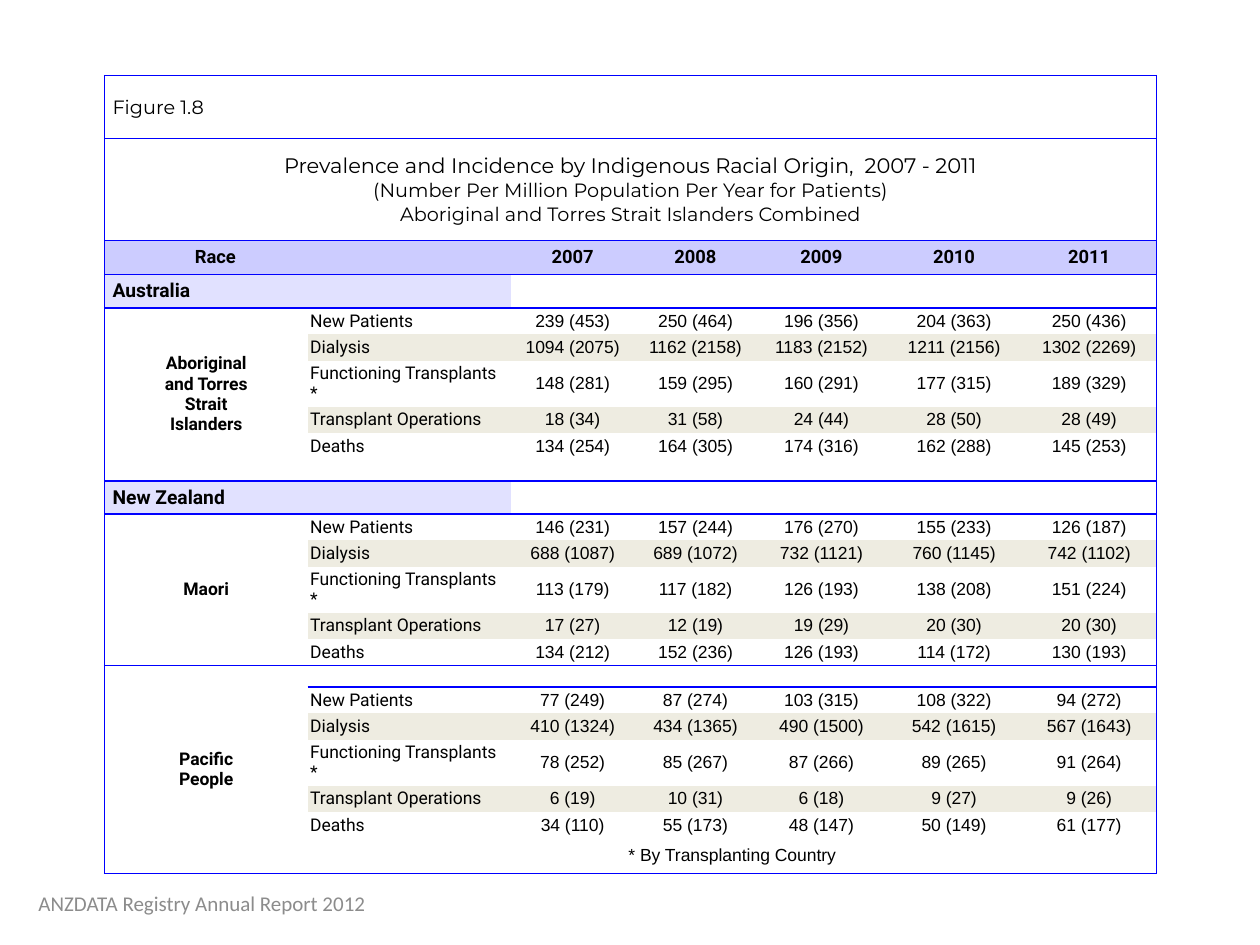
import pptx
import pptx.dml.color
import pptx.enum.text
import pptx.oxml
import pptx.oxml.ns
import pptx.util

Pt = pptx.util.Pt
ALIGN = pptx.enum.text.PP_ALIGN
MIDDLE = pptx.enum.text.MSO_ANCHOR.MIDDLE

COLORS = {
    "text": "000000",
    "border": "0000FF",
    "header": "CCCCFF",
    "country": "E1E1FF",
    "stripe": "EEECE1",
    "source": "8C8C8C",
}

FORMATS = {
    "figure": {"name": "Montserrat", "size": Pt(11)},
    "title": {"name": "Montserrat", "size": Pt(12)},
    "subtitle": {"name": "Montserrat", "size": Pt(11)},
    "header": {"name": "Roboto", "size": Pt(10.5), "bold": True},
    "country": {"name": "Roboto", "size": Pt(11), "bold": True},
    "race": {"name": "Roboto", "size": Pt(10), "bold": True},
    "measure": {"name": "Roboto", "size": Pt(10), "bold": False},
    "value": {"name": "Arial", "size": Pt(10), "bold": False},
    "source": {"name": "Calibri", "size": Pt(12)},
}

TITLE_LINES = [
    "Prevalence and Incidence by Indigenous Racial Origin,\u00a0 2007 - 2011".replace("\u00a0", " "),
    "(Number Per Million Population Per Year for Patients)",
    "Aboriginal and Torres Strait Islanders Combined",
]
YEARS = ["2007", "2008", "2009", "2010", "2011"]
MEASURES = ["New Patients", "Dialysis", "Functioning Transplants *",
            "Transplant Operations", "Deaths"]

GROUPS = [
    {
        "country": "Australia", "country_row": 3, "first_row": 4,
        "race": ["Aboriginal", "and Torres", "Strait", "Islanders"], "race_rows": (4, 9),
        "values": [
            ["239 (453)", "250 (464)", "196 (356)", "204 (363)", "250 (436)"],
            ["1094 (2075)", "1162 (2158)", "1183 (2152)", "1211 (2156)", "1302 (2269)"],
            ["148 (281)", "159 (295)", "160 (291)", "177 (315)", "189 (329)"],
            ["18 (34)", "31 (58)", "24 (44)", "28 (50)", "28 (49)"],
            ["134 (254)", "164 (305)", "174 (316)", "162 (288)", "145 (253)"],
        ],
    },
    {
        "country": "New Zealand", "country_row": 10, "first_row": 11,
        "race": ["Maori"], "race_rows": (11, 15),
        "values": [
            ["146 (231)", "157 (244)", "176 (270)", "155 (233)", "126 (187)"],
            ["688 (1087)", "689 (1072)", "732 (1121)", "760 (1145)", "742 (1102)"],
            ["113 (179)", "117 (182)", "126 (193)", "138 (208)", "151 (224)"],
            ["17 (27)", "12 (19)", "19 (29)", "20 (30)", "20 (30)"],
            ["134 (212)", "152 (236)", "126 (193)", "114 (172)", "130 (193)"],
        ],
    },
    {
        "country": None, "country_row": None, "first_row": 17,
        "race": ["Pacific", "People"], "race_rows": (16, 22),
        "values": [
            ["77 (249)", "87 (274)", "103 (315)", "108 (322)", "94 (272)"],
            ["410 (1324)", "434 (1365)", "490 (1500)", "542 (1615)", "567 (1643)"],
            ["78 (252)", "85 (267)", "87 (266)", "89 (265)", "91 (264)"],
            ["6 (19)", "10 (31)", "6 (18)", "9 (27)", "9 (26)"],
            ["34 (110)", "55 (173)", "48 (147)", "50 (149)", "61 (177)"],
        ],
    },
]

COLUMN_WIDTHS = [116, 116, 70.8, 69.6, 74.4, 77.2, 77.2]
MEASURE_HEIGHTS = [15.1, 15.1, 26, 15.1, 15.1]
ROW_HEIGHTS = ([36, 58.3, 19.5, 19] + MEASURE_HEIGHTS + [12.2, 19] + MEASURE_HEIGHTS
               + [12.2] + MEASURE_HEIGHTS + [20])
TOP_LINES = {0, 1, 2, 3, 10, 16}
BOTTOM_LINES = {0, 1, 2, 9, 15, 22}
NO_STYLE = "{2D5ABB26-0587-4C30-8999-92F81FD0307C}"


def write_lines(text_frame, lines, styles, color="text", align=ALIGN.CENTER, after=None):
    for index, (line, style) in enumerate(zip(lines, styles)):
        paragraph = text_frame.paragraphs[0] if index == 0 else text_frame.add_paragraph()
        paragraph.alignment = align
        if after is not None:
            paragraph.space_after = Pt(after)
        run = paragraph.add_run()
        run.text = line
        for name, value in FORMATS[style].items():
            setattr(run.font, name, value)
        run.font.color.rgb = pptx.dml.color.RGBColor.from_string(COLORS[color])


def write_cell(cell, lines, style, align=ALIGN.CENTER, after=None, left=1.5):
    cell.margin_left = Pt(left)
    write_lines(cell.text_frame, lines, [style] * len(lines), align=align, after=after)


def fill_cell(cell, color):
    cell.fill.solid()
    cell.fill.fore_color.rgb = pptx.dml.color.RGBColor.from_string(COLORS[color])


def add_borders(cell, row, column):
    last_row = row + (cell.span_height if cell.is_merge_origin else 1) - 1
    last_column = column + (cell.span_width if cell.is_merge_origin else 1) - 1
    sides = {
        "L": column == 0,
        "R": last_column == len(COLUMN_WIDTHS) - 1,
        "T": row in TOP_LINES,
        "B": last_row in BOTTOM_LINES,
    }
    properties = cell._tc.get_or_add_tcPr()
    for side in (side for side, shown in sides.items() if shown):
        properties.append(pptx.oxml.parse_xml(
            f'<a:ln{side} {pptx.oxml.ns.nsdecls("a")} w="12700"><a:solidFill>'
            f'<a:srgbClr val="{COLORS["border"]}"/></a:solidFill></a:ln{side}>'))


def prepare_cells(table):
    for row in range(len(ROW_HEIGHTS)):
        for column in range(len(COLUMN_WIDTHS)):
            cell = table.cell(row, column)
            for side in ("left", "right", "top", "bottom"):
                setattr(cell, f"margin_{side}", Pt(1.5))
            cell.vertical_anchor = MIDDLE
            add_borders(cell, row, column)
            cell.text_frame.paragraphs[0]._p.append(pptx.oxml.parse_xml(
                f'<a:endParaRPr {pptx.oxml.ns.nsdecls("a")} sz="600"/>'))


def merge_cells(table):
    last = len(COLUMN_WIDTHS) - 1
    for row in (0, 1):
        table.cell(row, 0).merge(table.cell(row, last))
    for group in GROUPS:
        first_row, last_row = group["race_rows"]
        table.cell(first_row, 0).merge(table.cell(last_row, 0))
        if group["country"]:
            row = group["country_row"]
            table.cell(row, 0).merge(table.cell(row, 1))
    table.cell(22, 1).merge(table.cell(22, last))


def fill_heading(table):
    write_cell(table.cell(0, 0), ["Figure 1.8"], "figure", ALIGN.LEFT, left=4.5)
    write_lines(table.cell(1, 0).text_frame, TITLE_LINES, ["title", "subtitle", "subtitle"])
    for column in range(len(COLUMN_WIDTHS)):
        fill_cell(table.cell(2, column), "header")
    write_cell(table.cell(2, 0), ["Race"], "header", left=12)
    for column, year in enumerate(YEARS, 2):
        write_cell(table.cell(2, column), [year], "header")


def fill_group(table, group):
    if group["country"]:
        cell = table.cell(group["country_row"], 0)
        write_cell(cell, [group["country"]], "country", ALIGN.LEFT, left=4.5)
        fill_cell(cell, "country")
    write_cell(table.cell(group["race_rows"][0], 0), group["race"], "race")
    for index, (measure, values) in enumerate(zip(MEASURES, group["values"])):
        row = group["first_row"] + index
        write_cell(table.cell(row, 1), [measure], "measure", ALIGN.LEFT)
        for column, value in enumerate(values, 2):
            write_cell(table.cell(row, column), [value], "value", after=14)
        if index % 2:
            for column in range(1, len(COLUMN_WIDTHS)):
                fill_cell(table.cell(row, column), "stripe")


def add_prevalence_table(slide, left, top):
    shape = slide.shapes.add_table(len(ROW_HEIGHTS), len(COLUMN_WIDTHS), Pt(left), Pt(top),
                                   Pt(sum(COLUMN_WIDTHS)), Pt(sum(ROW_HEIGHTS)))
    table = shape.table
    table.first_row = table.horz_banding = False
    table._tbl.tblPr.find(pptx.oxml.ns.qn("a:tableStyleId")).text = NO_STYLE
    for column, width in zip(table.columns, COLUMN_WIDTHS):
        column.width = Pt(width)
    for row, height in zip(table.rows, ROW_HEIGHTS):
        row.height = Pt(height)
    merge_cells(table)
    prepare_cells(table)
    fill_heading(table)
    for group in GROUPS:
        fill_group(table, group)
    write_cell(table.cell(22, 1), ["* By Transplanting Country"], "value")


def add_source(slide, left, top, width, height):
    shape = slide.shapes.add_textbox(Pt(left), Pt(top), Pt(width), Pt(height))
    shape.text_frame.word_wrap = True
    shape.text_frame.vertical_anchor = MIDDLE
    write_lines(shape.text_frame, ["ANZDATA Registry Annual Report 2012"], ["source"], "source")


def main():
    presentation = pptx.Presentation()
    presentation.slide_width, presentation.slide_height = Pt(720), Pt(540)
    slide = presentation.slides.add_slide(presentation.slide_layouts[6])
    add_prevalence_table(slide, 59.8, 43.2)
    add_source(slide, 1.4, 501.8, 228.2, 28.8)
    presentation.save("out.pptx")


if __name__ == "__main__":
    main()
